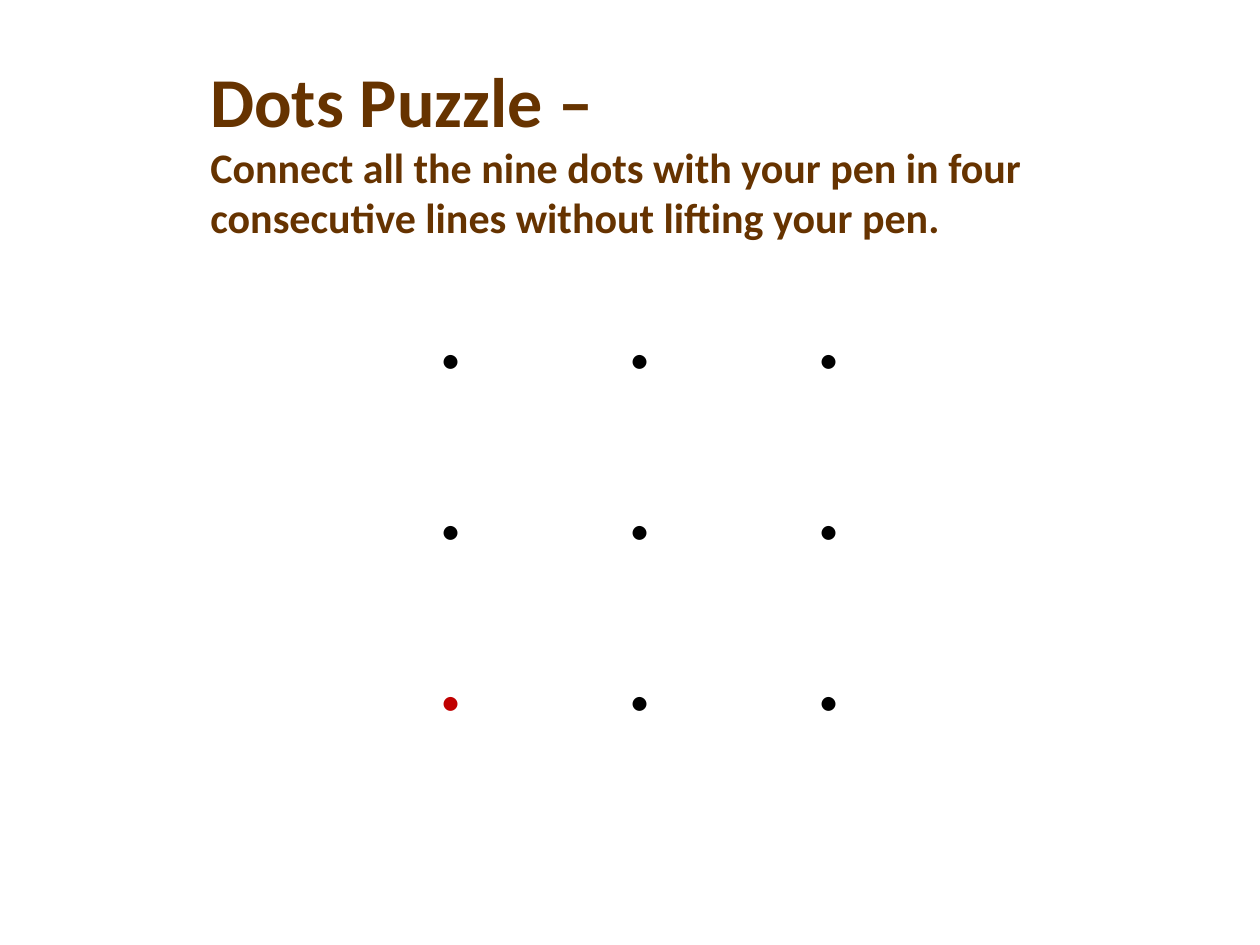
from itertools import product

from pptx import Presentation
from pptx.dml.color import RGBColor
from pptx.enum.text import MSO_ANCHOR, PP_ALIGN
from pptx.util import Emu, Pt

PX_PER_INCH = 126
FONT = "Calibri"
BROWN = RGBColor(0x66, 0x33, 0x00)
BLACK = RGBColor(0, 0, 0)
RED = RGBColor(0xC0, 0, 0)
GRID_SIZE = 3
START_DOT = (2, 0)


def px(length):
    return Emu(round(length * 914400 / PX_PER_INCH))


def add_text(paragraph, text, *, size, color, bold=False, align=PP_ALIGN.LEFT):
    paragraph.alignment = align
    run = paragraph.add_run()
    run.text = text
    run.font.name = FONT
    run.font.size = Pt(size)
    run.font.bold = bold
    run.font.color.rgb = color


def add_heading(slide, left, top, width, height):
    box = slide.shapes.add_textbox(px(left), px(top), px(width), px(height))
    frame = box.text_frame
    frame.word_wrap = True
    frame.vertical_anchor = MSO_ANCHOR.MIDDLE
    paragraph = frame.paragraphs[0]
    add_text(paragraph, "Dots Puzzle –", size=40, color=BROWN, bold=True)
    paragraph.add_line_break()
    add_text(
        paragraph,
        "Connect all the nine dots with your pen in four "
        "consecutive lines without lifting your pen.",
        size=24, color=BROWN, bold=True,
    )


def add_dot_grid(slide, left, top, width, height):
    """Place a plain table with one dot in each cell; the start dot is red."""
    table = slide.shapes.add_table(
        GRID_SIZE, GRID_SIZE, px(left), px(top), px(width), px(height)
    ).table
    table.first_row = False
    table.horz_banding = False
    for row, column in product(range(GRID_SIZE), repeat=2):
        cell = table.cell(row, column)
        cell.fill.background()
        color = RED if (row, column) == START_DOT else BLACK
        add_text(cell.text_frame.paragraphs[0], ".", size=66, color=color,
                 align=PP_ALIGN.CENTER)


def main():
    presentation = Presentation()
    presentation.slide_width = px(1260)
    presentation.slide_height = px(945)
    slide = presentation.slides.add_slide(presentation.slide_layouts[6])
    add_heading(slide, 198, 38, 1033, 224)
    add_dot_grid(slide, 357, 252, 567, 514)
    presentation.save("out.pptx")


if __name__ == "__main__":
    main()
